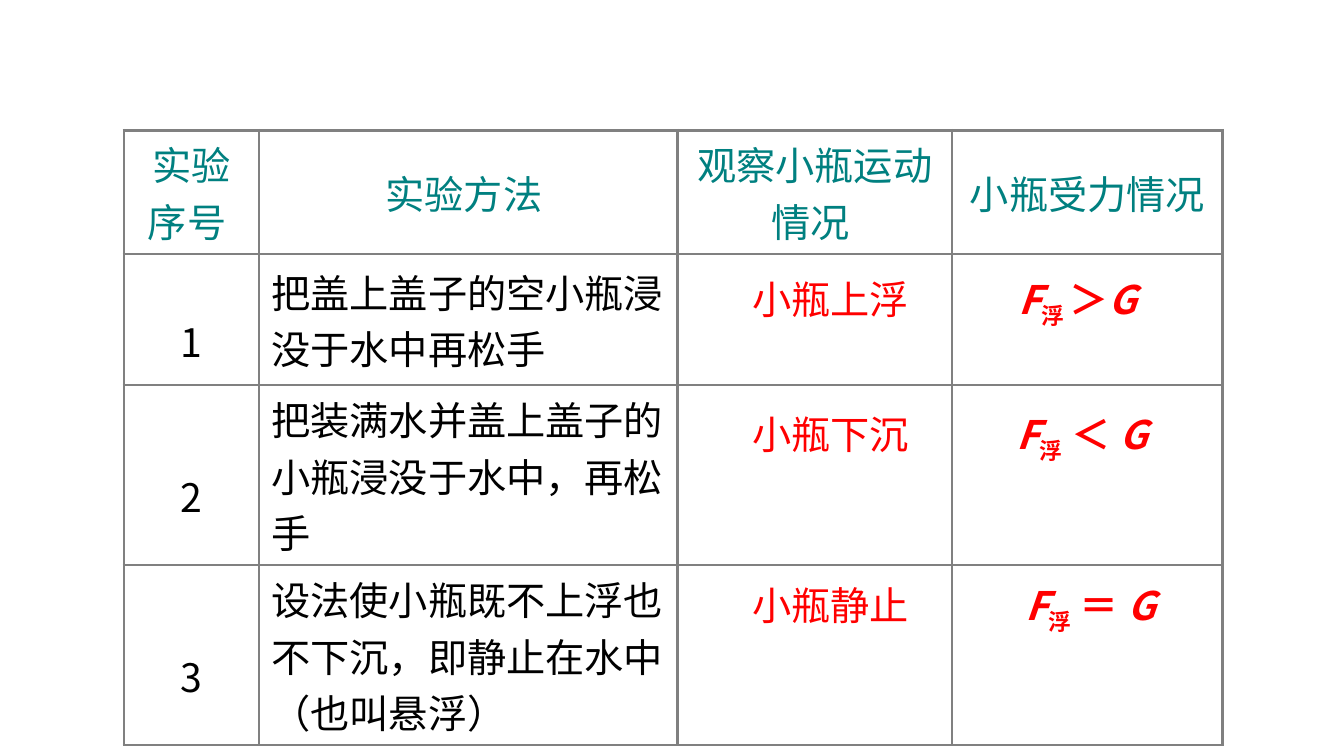
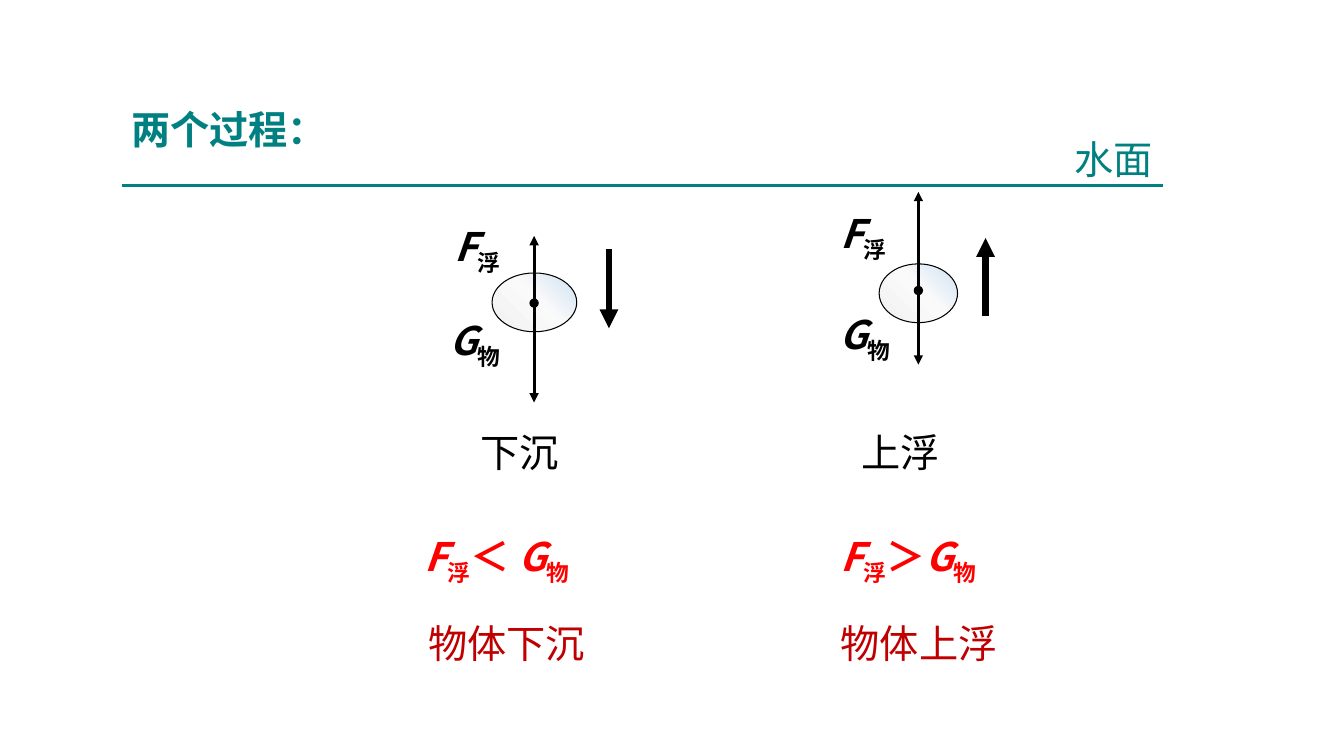
from dataclasses import dataclass

from lxml.etree import SubElement as Sub
from pptx import Presentation
from pptx.dml.color import RGBColor as Rgb
from pptx.enum.shapes import MSO_CONNECTOR as Conn, MSO_SHAPE as Shape
from pptx.enum.text import MSO_ANCHOR as Anchor, MSO_AUTO_SIZE as Fit, PP_ALIGN as Align
from pptx.oxml.ns import qn
from pptx.util import Pt


@dataclass(frozen=True)
class Theme:
    font: str = "Noto Sans CJK SC"
    size: float = 28
    teal: str = "008080"
    black: str = "000000"
    red: str = "FF0000"
    dark: str = "C00000"
    grey: str = "808080"
    glow: tuple = ((0, "F1F0F0"), (55, "FAFAFA"), (100, "CEE1F2"))


class Deck:
    """Holds the style and the current slide."""

    def __init__(self, theme):
        self.theme = theme
        self.prs = Presentation()
        self.prs.slide_width, self.prs.slide_height = Pt(960), Pt(540)
        self.slide = None

    def new(self):
        self.slide = self.prs.slides.add_slide(self.prs.slide_layouts[6])

    def run(self, para, text, color, bold=False, slant=False, sub=False):
        run = para.add_run()
        run.text = text
        font = run.font
        font.name, font.size = self.theme.font, Pt(self.theme.size)
        font.color.rgb = Rgb.from_string(color)
        font.bold, font.italic = bold, slant
        props = run._r.get_or_add_rPr()
        if sub:
            props.set("baseline", "-25000")
        Sub(props, qn("a:ea"), typeface=self.theme.font)

    def box(self, left, top, width, align):
        shape = self.slide.shapes.add_textbox(Pt(left), Pt(top), Pt(width), Pt(41))
        frame = shape.text_frame
        frame.word_wrap, frame.auto_size = True, Fit.SHAPE_TO_FIT_TEXT
        para = frame.paragraphs[0]
        para.alignment = align
        return para

    def text(self, text, left, top, width, color, bold=False, align=Align.LEFT):
        self.run(self.box(left, top, width, align), text, color, bold)

    def force(self, parts, left, top, width, color, align=Align.LEFT):
        """Sets F and G in italics and the marks 浮 and 物 as subscripts."""
        para = self.box(left, top, width, align)
        for part in parts:
            sign = part.strip()
            self.run(para, part, color, True, sign in "FG", sign in "浮物")

    def line(self, x1, y1, x2, y2, color, width, head=None, tail=None):
        line = self.slide.shapes.add_connector(
            Conn.STRAIGHT, Pt(x1), Pt(y1), Pt(x2), Pt(y2))
        line.line.color.rgb = Rgb.from_string(color)
        line.line.width = Pt(width)
        props = line._element.spPr
        for tag, kind in (("a:headEnd", head), ("a:tailEnd", tail)):
            if kind:
                Sub(props.find(qn("a:ln")), qn(tag), type=kind)
        Sub(props, qn("a:effectLst"))

    def arrow(self, x, start, end, width, head=None):
        self.line(x, start, x, end, self.theme.black, width, head, "triangle")

    def ball(self, left, top, width, height):
        ball = self.slide.shapes.add_shape(
            Shape.OVAL, Pt(left), Pt(top), Pt(width), Pt(height))
        ball.shadow.inherit = False
        ball.line.color.rgb = Rgb.from_string(self.theme.black)
        ball.line.width = Pt(0.75)
        ball.fill.gradient()
        grad = ball._element.spPr.find(qn("a:gradFill"))
        for child in list(grad):
            grad.remove(child)
        stops = Sub(grad, qn("a:gsLst"))
        for spot, color in self.theme.glow:
            stop = Sub(stops, qn("a:gs"), pos=str(spot * 1000))
            Sub(stop, qn("a:srgbClr"), val=color)
        way = Sub(grad, qn("a:path"), path="circle")
        Sub(way, qn("a:fillToRect"), l="0", t="100000", r="100000", b="0")

    def cell(self, cell):
        """Draws the cell's borders and clears its fill."""
        props = cell._tc.get_or_add_tcPr()
        for side in ("lnL", "lnR", "lnT", "lnB"):
            edge = Sub(props, qn("a:" + side), w=str(Pt(2.25)))
            Sub(Sub(edge, qn("a:solidFill")), qn("a:srgbClr"), val=self.theme.grey)
        cell.fill.background()
        cell.vertical_anchor = Anchor.MIDDLE
        cell.margin_left = cell.margin_right = Pt(9)
        cell.margin_top = cell.margin_bottom = Pt(3.6)

    def table(self, left, top, cols, rows, data):
        grid = self.slide.shapes.add_table(
            len(rows), len(cols), Pt(left), Pt(top), Pt(sum(cols)), Pt(sum(rows))).table
        grid.first_row = grid.horz_banding = False
        for col, width in zip(grid.columns, cols):
            col.width = Pt(width)
        for row, height in zip(grid.rows, rows):
            row.height = Pt(height)
        for r in range(len(rows)):
            for c in range(len(cols)):
                cell = grid.cell(r, c)
                self.cell(cell)
                if c >= len(data[r]):
                    continue
                para = cell.text_frame.paragraphs[0]
                para.alignment = Align.CENTER if r == 0 or c == 0 else Align.LEFT
                if r and c == 0:
                    cell.margin_top = Pt(33)
                color = self.theme.black if r else self.theme.teal
                self.run(para, data[r][c], color)


def tests(deck):
    deck.new()
    red, mid = deck.theme.red, Align.CENTER
    deck.table(88.5, 93, (96.5, 299, 196, 193.5), (88.5, 93.5, 128.5, 128.5), (
        ("实验序号 ", "实验方法 ", "观察小瓶运动情况 ", "小瓶受力情况"),
        ("1", "把盖上盖子的空小瓶浸没于水中再松手"),
        ("2", "把装满水并盖上盖子的小瓶浸没于水中，再松手"),
        ("3", "设法使小瓶既不上浮也不下沉，即静止在水中（也叫悬浮）"),
    ))
    for top, seen, parts, left, width in (
        (193, "小瓶上浮", ("F", "浮 ", "＞", "G"), 675.5, 188),
        (289.5, "小瓶下沉", ("F", "浮", " ＜ ", "G"), 672.5, 201),
        (412, "小瓶静止", ("F", "浮", " ＝ ", "G"), 672.5, 213),
    ):
        deck.text(seen, 505, top, 176.5, red, align=mid)
        deck.force(parts, left, top, width, red, mid)


def moves(deck):
    deck.new()
    look = deck.theme
    deck.text("两个过程：", 86.5, 72, 170, look.teal, bold=True)
    deck.text("水面", 760.5, 93, 136, look.teal)
    deck.line(87, 132.5, 831, 132.5, look.teal, 1.5)
    for name, ball, axis, lift, pull, move, names, sign, left in (
        ("下沉", (351.5, 195, 60.5, 42), (381.5, 216.5, 168.5, 287.5),
         (317.5, 155.5), (314, 222.5), (435, 178, 234.5), 336, "＜ ", (296.5, 299)),
        ("上浮", (628, 188.5, 56, 42), (656, 207.5, 137, 260.5),
         (593.5, 146), (592.5, 218), (704, 226, 170), 608.5, "＞", (593.5, 593.5)),
    ):
        x, dot, high, low = axis
        deck.ball(*ball)
        deck.arrow(x, dot, low, 2.25)
        deck.arrow(x, dot, high, 2.25, "oval")
        deck.arrow(*move, 4.5)
        deck.force("F浮", *lift, 76, look.black)
        deck.force("G物", *pull, 76, look.black)
        deck.text(name, names, 302.5, 120, look.black)
        deck.force(("F", "浮", sign, "G", "物"), left[0], 376.5, 200, look.red)
        deck.text("物体" + name, left[1], 438.5, 180, look.dark)


def main():
    deck = Deck(Theme())
    tests(deck)
    moves(deck)
    deck.prs.save("out.pptx")


if __name__ == "__main__":
    main()
